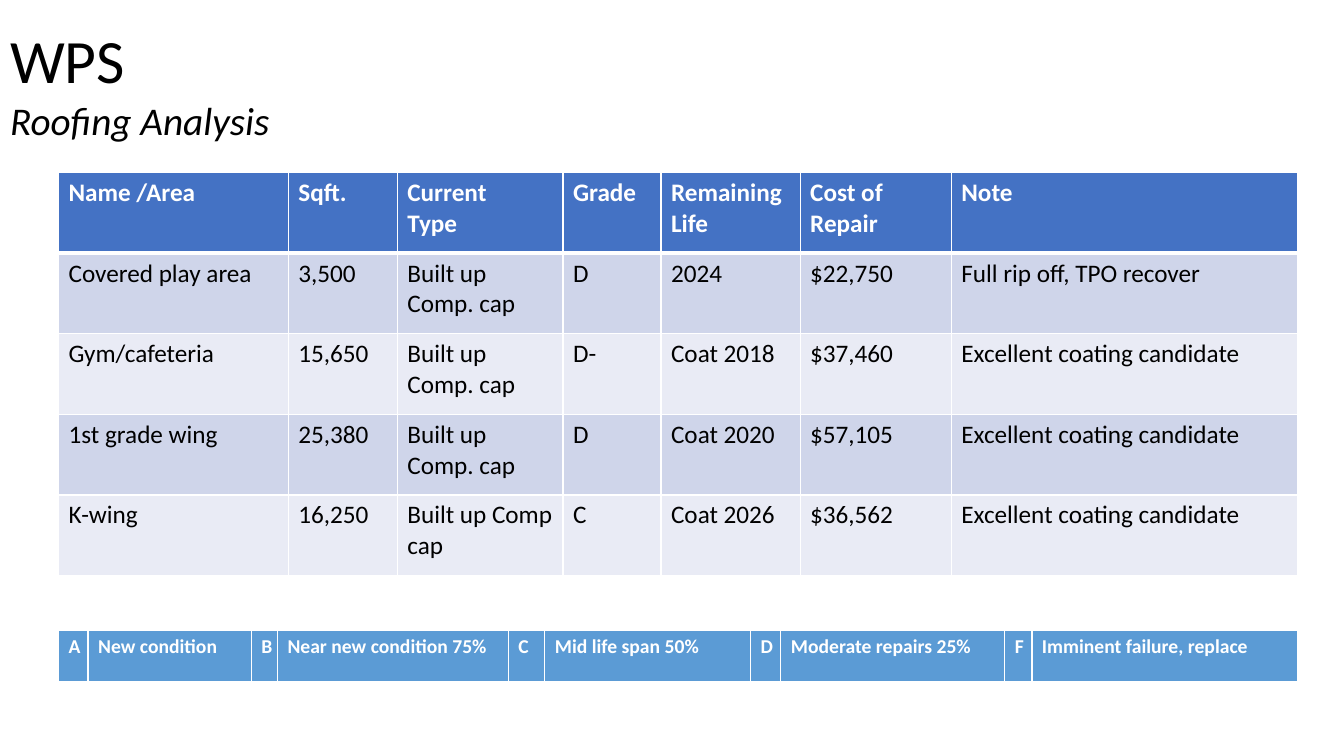
from dataclasses import dataclass

from lxml import etree
from pptx import Presentation
from pptx.dml.color import RGBColor
from pptx.enum import text
from pptx.oxml import ns
from pptx.slide import Slide
from pptx.table import _Cell
from pptx.util import Pt

FONT = "Calibri"
WHITE, BLACK = "FFFFFF", "000000"
TABLE_LEFT = 41.8
THIN, THICK = 1, 3


@dataclass(frozen=True)
class RowStyle:
    fill: str
    color: str
    size: int
    bold: bool = False
    top: int = THIN
    bottom: int = THIN


@dataclass(frozen=True)
class Grid:
    top: float
    row_height: float
    column_widths: list[float]
    rows: list[list[str]]
    styles: list[RowStyle]


HEADER = RowStyle("4472C4", WHITE, 18, bold=True, bottom=THICK)
FIRST_ROOF = RowStyle("CFD5EA", BLACK, 18, top=THICK)
DARK_BAND = RowStyle("CFD5EA", BLACK, 18)
LIGHT_BAND = RowStyle("E9EBF5", BLACK, 18)
LEGEND = RowStyle("5B9BD5", WHITE, 14, bold=True, bottom=THICK)

COATING = "Excellent coating candidate"
ROOFS = Grid(
    top=123.1,
    row_height=57.6,
    column_widths=[164.2, 77.8, 118.4, 70, 99.4, 108, 247.7],
    rows=[
        ["Name /Area", "Sqft.", "Current\nType", "Grade", "Remaining Life", "Cost of Repair", "Note"],
        ["Covered play area", "3,500", "Built up Comp. cap", "D", "2024", "$22,750",
         "Full rip off, TPO recover"],
        ["Gym/cafeteria", "15,650", "Built up Comp. cap", "D-", "Coat 2018", "$37,460", COATING],
        ["1st grade wing", "25,380", "Built up Comp. cap", "D", "Coat 2020", "$57,105", COATING],
        ["K-wing", "16,250", "Built up Comp cap", "C", "Coat 2026", "$36,562", COATING],
    ],
    styles=[HEADER, FIRST_ROOF, LIGHT_BAND, DARK_BAND, LIGHT_BAND],
)
GRADES = Grid(
    top=450,
    row_height=37.8,
    column_widths=[21.1, 116.6, 18.7, 165, 26, 147, 21.6, 160, 19.4, 190.1],
    rows=[["A", "New condition", "B", "Near new condition 75%", "C", "Mid life span 50%",
           "D", "Moderate repairs 25%", "F", "Imminent failure, replace"]],
    styles=[LEGEND],
)


def rgb(color: str) -> RGBColor:
    return RGBColor.from_string(color)


def add_borders(cell: _Cell, style: RowStyle) -> None:
    """Draw white cell borders; call before the fill, which must follow them in the XML."""
    properties = cell._tc.get_or_add_tcPr()
    widths = {"a:lnL": THIN, "a:lnR": THIN, "a:lnT": style.top, "a:lnB": style.bottom}
    for tag, width in widths.items():
        line = etree.SubElement(properties, ns.qn(tag), w=str(Pt(width)))
        solid = etree.SubElement(line, ns.qn("a:solidFill"))
        etree.SubElement(solid, ns.qn("a:srgbClr"), val=WHITE)


def fill_cell(cell: _Cell, content: str, style: RowStyle) -> None:
    add_borders(cell, style)
    cell.fill.solid()
    cell.fill.fore_color.rgb = rgb(style.fill)
    cell.text = content
    for paragraph in cell.text_frame.paragraphs:
        font = paragraph.font
        font.name, font.size, font.bold = FONT, Pt(style.size), style.bold
        font.color.rgb = rgb(style.color)


def add_grid(slide: Slide, grid: Grid) -> None:
    table = slide.shapes.add_table(
        len(grid.rows), len(grid.column_widths), Pt(TABLE_LEFT), Pt(grid.top),
        Pt(sum(grid.column_widths)), Pt(grid.row_height * len(grid.rows)),
    ).table
    table.first_row = table.horz_banding = False
    for column, width in zip(table.columns, grid.column_widths):
        column.width = Pt(width)
    for row, contents, style in zip(table.rows, grid.rows, grid.styles):
        row.height = Pt(grid.row_height)
        for cell, content in zip(row.cells, contents):
            fill_cell(cell, content, style)


def set_title(slide: Slide) -> None:
    title = slide.shapes.title
    title.left, title.top, title.width, title.height = Pt(0), Pt(12.2), Pt(351.4), Pt(94.3)
    frame = title.text_frame
    frame.text = "WPS\nRoofing Analysis"
    frame.word_wrap = True
    frame.auto_size = text.MSO_AUTO_SIZE.SHAPE_TO_FIT_TEXT
    frame.vertical_anchor = text.MSO_ANCHOR.TOP
    for paragraph, size, italic in zip(frame.paragraphs, (44, 28), (False, True)):
        paragraph.alignment = text.PP_ALIGN.LEFT
        paragraph.space_before = Pt(0)
        font = paragraph.font
        font.name, font.size, font.italic = FONT, Pt(size), italic
        font.color.rgb = rgb(BLACK)


def main() -> None:
    presentation = Presentation()
    presentation.slide_width, presentation.slide_height = Pt(960), Pt(540)
    title_only = presentation.slide_layouts.get_by_name("Title Only")
    slide = presentation.slides.add_slide(title_only)
    set_title(slide)
    for grid in (ROOFS, GRADES):
        add_grid(slide, grid)
    presentation.save("out.pptx")


if __name__ == "__main__":
    main()
